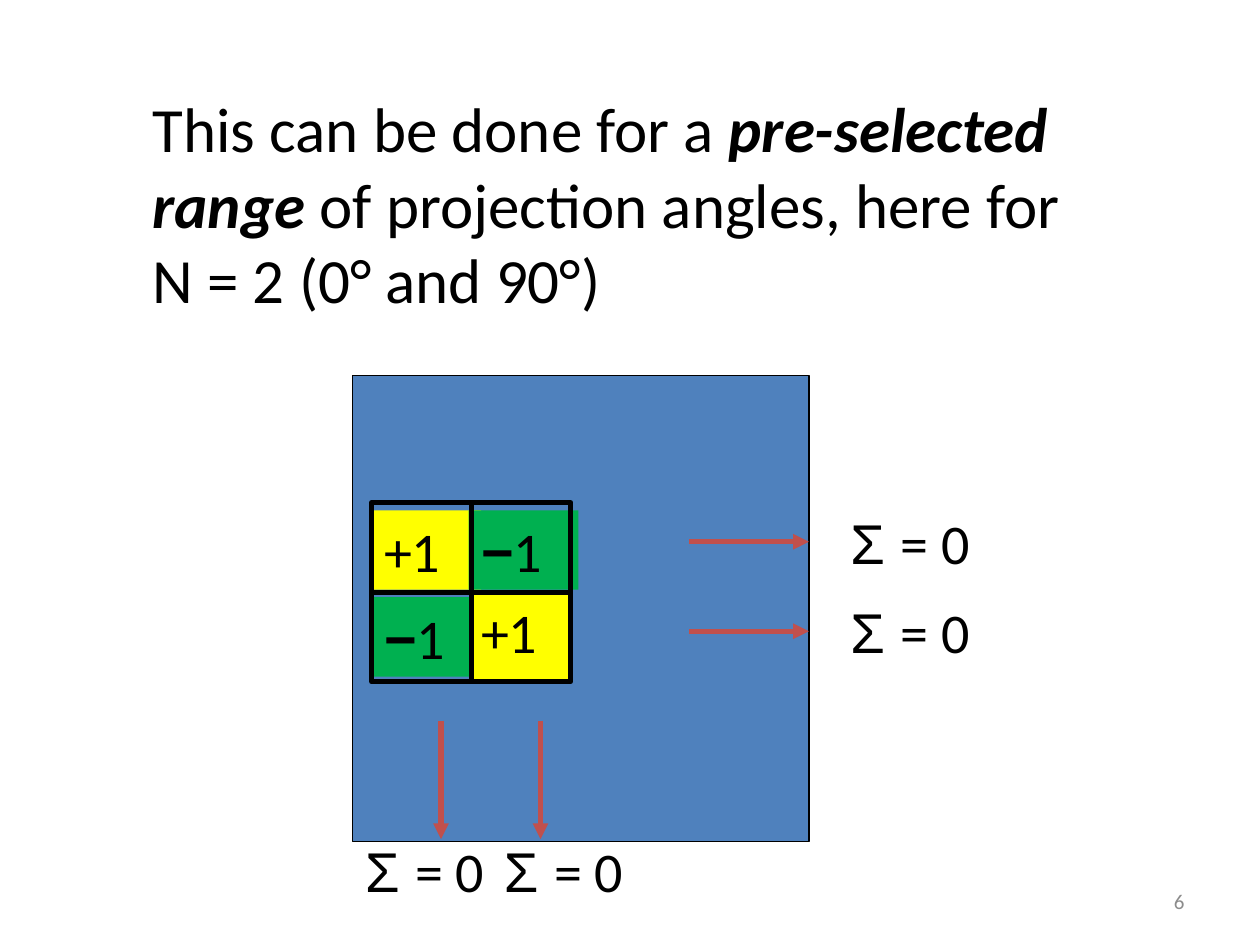
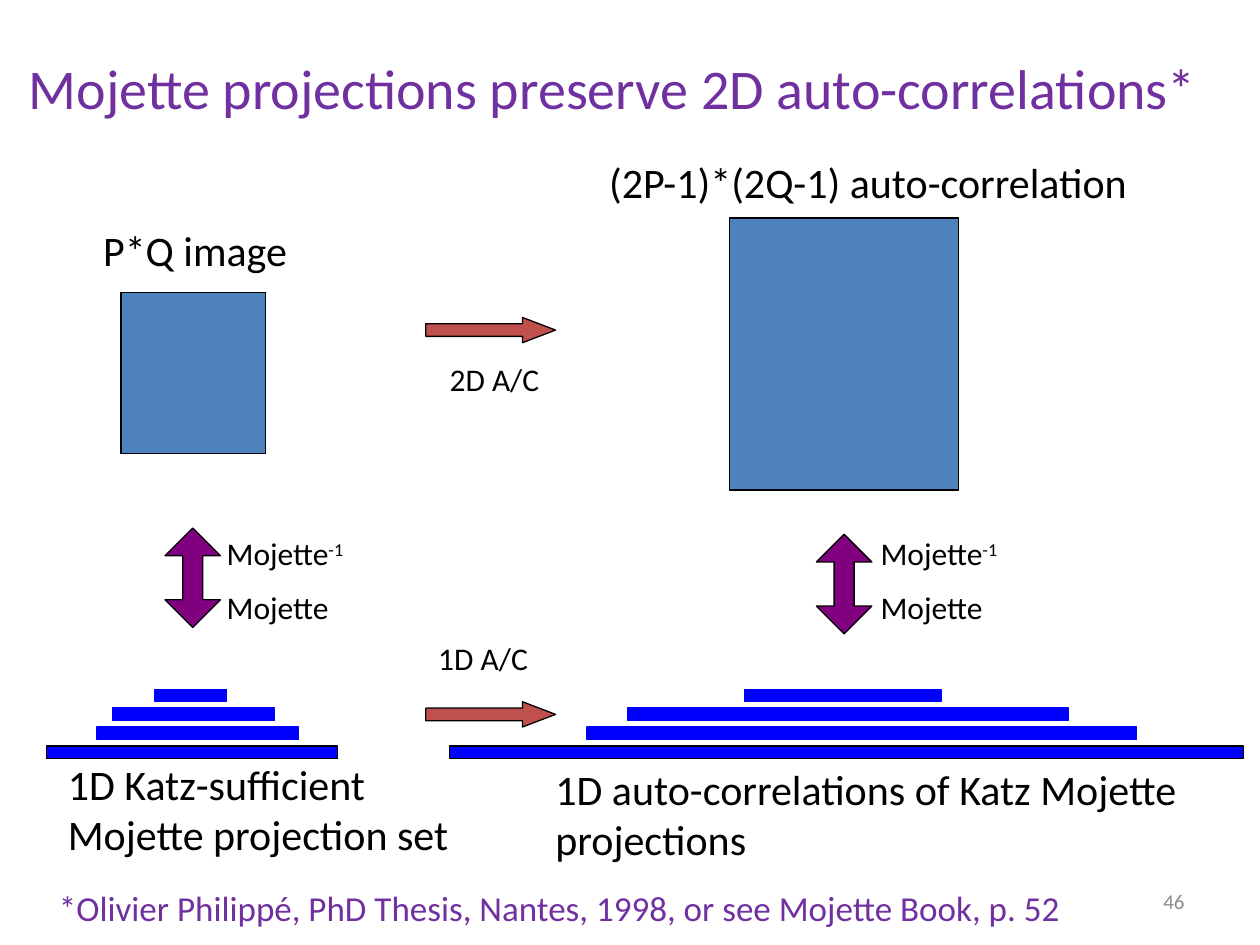
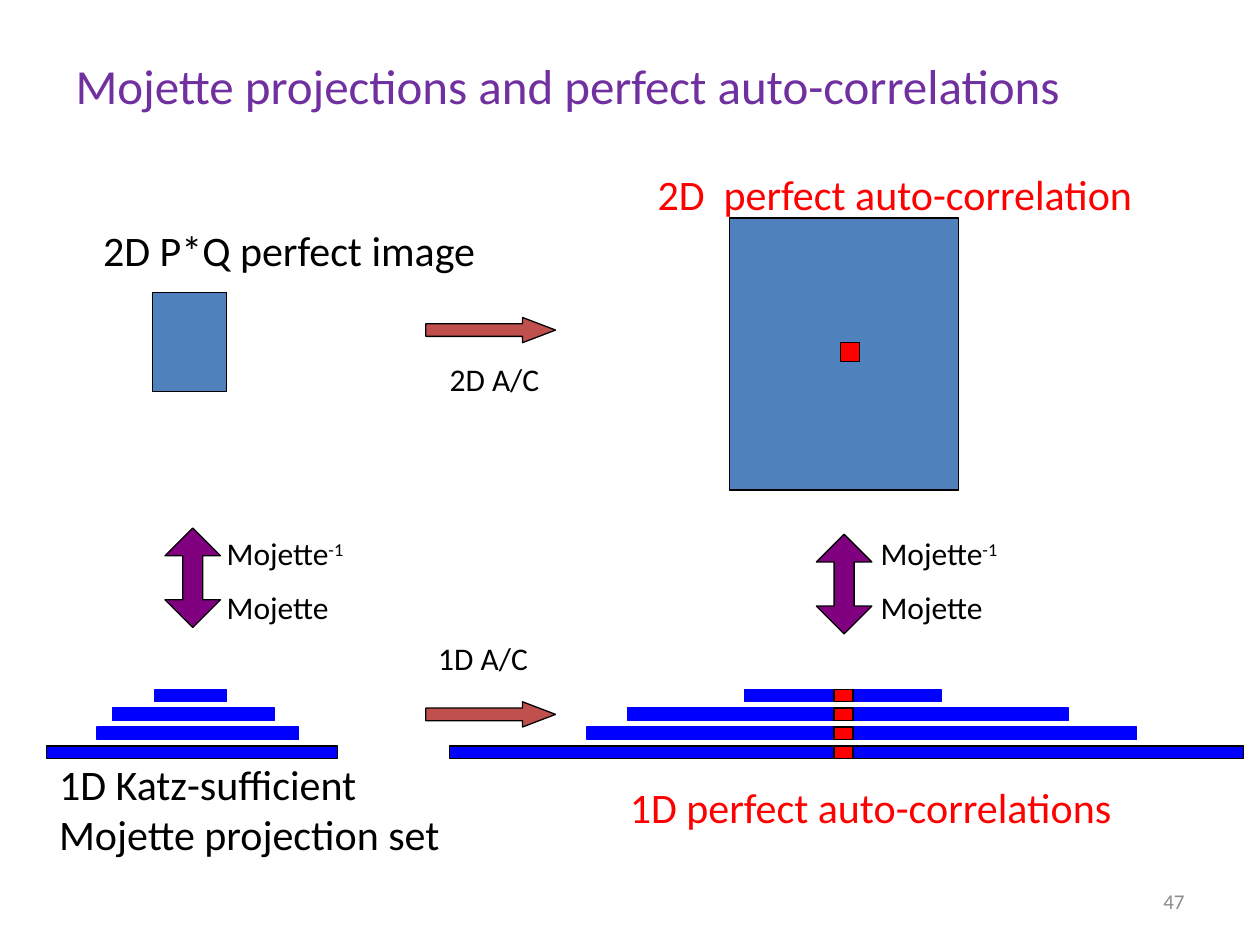
from dataclasses import dataclass

from lxml import etree
from pptx import Presentation
from pptx import util as u
from pptx.dml.color import RGBColor
from pptx.enum import shapes, text
from pptx.oxml import ns

BLACK = RGBColor(0x00, 0x00, 0x00)
GREY = RGBColor(0x8C, 0x8C, 0x8C)
PURPLE = RGBColor(0x70, 0x30, 0xA0)
VIOLET = RGBColor(0x80, 0x00, 0x80)
STEEL = RGBColor(0x4F, 0x81, 0xBD)
BRICK = RGBColor(0xC0, 0x50, 0x4D)
BLUE = RGBColor(0x00, 0x00, 0xFF)
RED = RGBColor(0xFF, 0x00, 0x00)
YELLOW = RGBColor(0xFF, 0xFF, 0x00)
GREEN = RGBColor(0x00, 0xB0, 0x50)

RECTANGLE = shapes.MSO_SHAPE.RECTANGLE
TOP = text.MSO_ANCHOR.TOP
MIDDLE = text.MSO_ANCHOR.MIDDLE
LEFT = text.PP_ALIGN.LEFT
RIGHT = text.PP_ALIGN.RIGHT


@dataclass
class Span:
    words: str
    font: str = "Calibri"
    bold: bool = False
    italic: bool = False
    raised: bool = False


PLUS_ONE = [[Span("+1")]]
MINUS_ONE = [[Span("−", "Arial", bold=True), Span("1")]]
ZERO_SUM = [[Span("Σ ", "Arial"), Span("= 0")]]
MOJETTE_PAIR = [[Span("Mojette"), Span("-1", raised=True)], [Span("Mojette")]]

BAR_TOP, BAR_STEP, BAR_HEIGHT = 5.47, 0.15, 0.1
IMAGE_BARS = [(1.23, 0.57), (0.89, 1.29), (0.77, 1.6), (0.37, 2.31)]
CORRELATION_BARS = [(5.91, 1.56), (4.98, 3.5), (4.66, 4.36), (3.57, 6.3)]


class Painter:
    def __init__(self, deck):
        self.deck = deck
        self.page = None

    def start(self, number, title, place, size, color):
        self.page = self.deck.slides.add_slide(self.deck.slide_layouts[5])
        box = self.page.shapes.title
        box.left, box.top, box.width, box.height = map(u.Inches, place)
        self.fill_text(box.text_frame, title, size, color, MIDDLE)
        self.label(str(number), (7.17, 6.95, 2.33, 0.4), 12, GREY, MIDDLE, RIGHT)

    def fill_text(self, frame, content, size, color=BLACK, anchor=TOP, align=LEFT):
        paragraphs = [[Span(content)]] if isinstance(content, str) else content
        frame.word_wrap = True
        frame.auto_size = text.MSO_AUTO_SIZE.NONE
        frame.vertical_anchor = anchor
        for index, spans in enumerate(paragraphs):
            para = frame.add_paragraph() if index else frame.paragraphs[0]
            para.alignment = align
            para.space_before = u.Pt(size / 2 if index else 0)
            for span in spans:
                run = para.add_run()
                run.text = span.words
                run.font.name = span.font
                run.font.size = u.Pt(size)
                run.font.bold = span.bold
                run.font.italic = span.italic
                run.font.color.rgb = color
                if span.raised:
                    run._r.get_or_add_rPr().set("baseline", "30000")

    def label(self, content, place, size, color=BLACK, anchor=TOP, align=LEFT):
        box = self.page.shapes.add_textbox(*map(u.Inches, place))
        self.fill_text(box.text_frame, content, size, color, anchor, align)

    def shape(self, place, fill=None, line=BLACK, weight=0.75, kind=RECTANGLE,
              adjust=(), group=None):
        owner = group.shapes if group else self.page.shapes
        shape = owner.add_shape(kind, *map(u.Inches, place))
        shape.shadow.inherit = False
        for index, value in enumerate(adjust):
            shape.adjustments[index] = value
        if fill is None:
            shape.fill.background()
        else:
            shape.fill.solid()
            shape.fill.fore_color.rgb = fill
        if line is None:
            shape.line.fill.background()
        else:
            shape.line.color.rgb = line
            shape.line.width = u.Pt(weight)
        return shape

    def tile(self, content, place, fill):
        shape = self.shape(place, fill, line=None)
        self.fill_text(shape.text_frame, content, 32)

    def arrow(self, *ends):
        arrow = self.page.shapes.add_connector(
            shapes.MSO_CONNECTOR.STRAIGHT, *map(u.Inches, ends))
        arrow.line.color.rgb = BRICK
        arrow.line.width = u.Pt(3)
        properties = arrow._element.spPr
        outline = properties.find(ns.qn("a:ln"))
        etree.SubElement(outline, ns.qn("a:tailEnd"), type="triangle")
        etree.SubElement(properties, ns.qn("a:effectLst"))

    def bars(self, spans):
        group = self.page.shapes.add_group_shape()
        for row, (left, width) in enumerate(spans):
            edge = BLACK if row == len(spans) - 1 else BLUE
            self.shape((left, BAR_TOP + row * BAR_STEP, width, BAR_HEIGHT),
                       BLUE, edge, group=group)

    def correlation_scheme(self, image_place):
        self.shape(image_place, STEEL)
        self.bars(IMAGE_BARS)
        self.shape((5.79, 1.73, 1.82, 2.16), STEEL)
        self.bars(CORRELATION_BARS)
        for left, top, label_left in [(1.31, 4.19, 1.7), (6.48, 4.24, 6.89)]:
            self.shape((left, top, 0.44, 0.79), VIOLET,
                       kind=shapes.MSO_SHAPE.UP_DOWN_ARROW, adjust=(0.5, 0.36))
            self.label(MOJETTE_PAIR, (label_left, 4.19, 1.31, 0.85), 18)
        for top in (2.52, 5.57):
            self.shape((3.38, top, 1.03, 0.2), BRICK,
                       kind=shapes.MSO_SHAPE.RIGHT_ARROW, adjust=(0.5, 1.31))
        self.label("2D A/C", (3.47, 2.81, 1.13, 0.4), 18)
        self.label("1D A/C", (3.38, 5.02, 1.13, 0.4), 18)


def ghost_slide(painter):
    title = [[Span("This can be done for a "),
              Span("pre-selected range", bold=True, italic=True),
              Span(" of projection angles, here for N = 2 (0° and 90°)")]]
    painter.start(6, title, (1.11, 0.55, 7.72, 2.12), 36, BLACK)
    painter.shape((2.8, 2.98, 3.62, 3.7), STEEL)

    for arrow_y, sum_top in [(4.3, 3.99), (5.01, 4.69)]:
        painter.arrow(5.47, arrow_y, 6.42, arrow_y)
        painter.label(ZERO_SUM, (6.65, sum_top, 1.57, 0.63), 32)
    for arrow_x, sum_left in [(3.5, 2.8), (4.29, 3.9)]:
        painter.arrow(arrow_x, 5.72, arrow_x, 6.66)
        painter.label(ZERO_SUM, (sum_left, 6.59, 1.57, 0.63), 32)

    cell_width, cell_height = 0.79, 0.71
    cells = [(2.95 + column * cell_width, 3.99 + row * cell_height,
              cell_width, cell_height) for row in range(2) for column in range(2)]
    painter.tile(PLUS_ONE, (2.95, 4.05, 0.87, 0.63), YELLOW)
    painter.tile(MINUS_ONE, (3.72, 4.05, 0.87, 0.63), GREEN)
    painter.shape(cells[3], YELLOW, weight=3)
    painter.label(PLUS_ONE, (3.72, 4.69, 0.87, 0.63), 32)
    painter.tile(MINUS_ONE, (2.95, 4.74, 0.79, 0.63), GREEN)
    for cell in cells[:3]:
        painter.shape(cell, weight=3)


def preserved_slide(painter):
    painter.start(46, "Mojette projections preserve 2D auto-correlations*",
                  (0.13, 0.3, 9.6, 0.79), 32, PURPLE)
    painter.correlation_scheme((0.96, 2.32, 1.15, 1.28))
    painter.label("P*Q image", (0.72, 1.73, 2.66, 0.5), 24)
    painter.label(" (2P-1)*(2Q-1) auto-correlation", (4.66, 1.19, 5.21, 0.5), 24)
    painter.label("1D auto-correlations of Katz Mojette projections",
                  (4.31, 6.01, 5.56, 0.91), 24)
    painter.label("1D Katz-sufficient Mojette projection set",
                  (0.44, 5.97, 3.33, 0.91), 24)
    painter.label("*Olivier Philippé, PhD Thesis, Nantes, 1998, or see Mojette Book, p. 52",
                  (0.37, 6.99, 8.37, 0.44), 20, PURPLE)


def perfect_slide(painter):
    painter.start(47, "Mojette projections and perfect auto-correlations",
                  (0.5, 0.3, 9, 0.74), 28, PURPLE)
    painter.correlation_scheme((1.21, 2.32, 0.59, 0.79))
    painter.label("2D P*Q perfect image", (0.72, 1.73, 3.17, 0.5), 24)
    painter.label("2D  perfect auto-correlation", (5.12, 1.29, 4.31, 0.5), 24, RED)
    painter.label("1D Katz-sufficient Mojette projection set",
                  (0.37, 5.97, 3.35, 0.91), 24)
    painter.label("1D perfect auto-correlations", (4.9, 6.15, 4.77, 0.5), 24, RED)
    painter.shape((6.67, 2.72, 0.15, 0.15), RED)
    for row in range(len(CORRELATION_BARS)):
        painter.shape((6.62, BAR_TOP + row * BAR_STEP, 0.15, BAR_HEIGHT), RED)


def main():
    deck = Presentation()
    deck.slide_width, deck.slide_height = u.Inches(10), u.Inches(7.5)
    painter = Painter(deck)
    ghost_slide(painter)
    preserved_slide(painter)
    perfect_slide(painter)
    deck.save("out.pptx")


if __name__ == "__main__":
    main()
